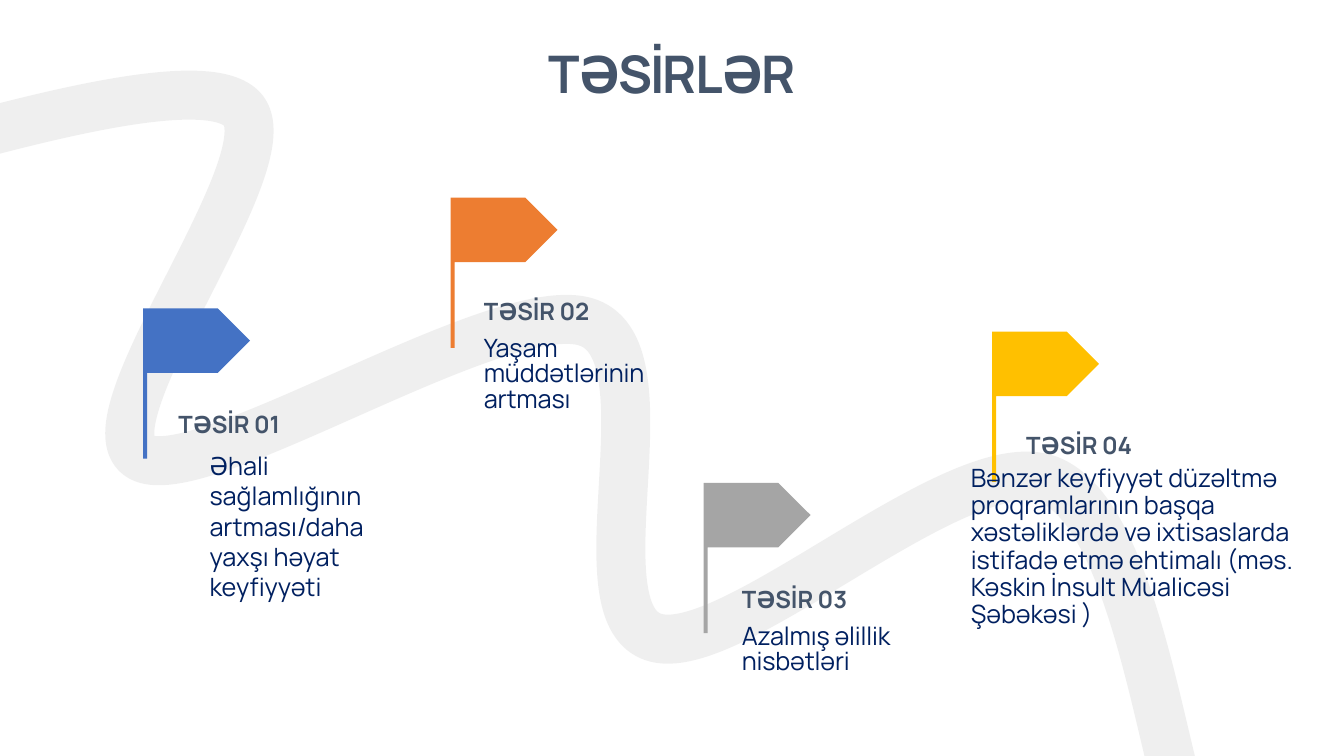
"""Build a slide with four flagged effects along a winding road."""
from lxml import etree
from pptx import Presentation
from pptx.dml.color import RGBColor
from pptx.enum.text import MSO_ANCHOR, MSO_AUTO_SIZE, PP_ALIGN
from pptx.oxml.ns import qn
from pptx.util import Inches, Pt

TOP, BOTTOM = MSO_ANCHOR.TOP, MSO_ANCHOR.BOTTOM
LEFT, CENTER = PP_ALIGN.LEFT, PP_ALIGN.CENTER
GROW, FIXED = MSO_AUTO_SIZE.SHAPE_TO_FIT_TEXT, MSO_AUTO_SIZE.NONE
SLATE, NAVY, ROAD = "44546A", "002060", "D9D9D9"

CURVE = [
    (-1.68, 1.71),
    (-0.98, 1.59), (1.88, 0.6), (2.39, 1.07),
    (2.9, 1.54), (0.81, 4.17), (1.39, 4.53),
    (1.96, 4.88), (4.98, 2.9), (5.83, 3.2),
    (6.68, 3.5), (5.71, 6.06), (6.48, 6.32),
    (7.24, 6.58), (9.5, 4.42), (10.4, 4.76),
    (11.29, 5.1), (11.54, 7.75), (11.86, 8.36),
]
FLAG = [(0, 0), (0.74, 0), (1.06, 0.32), (0.74, 0.64), (0.04, 0.64), (0.04, 1.49), (0, 1.49)]

EFFECTS = [
    ("4472C4", (1.42, 3.06), (1.67, 4.01), (1.48, 4.42, 2.47, 1.62),
     "Əhali sağlamlığının artması/daha yaxşı həyat keyfiyyəti",
     {"indent": 0.5}),
    ("ED7D31", (4.47, 1.96), (4.7, 2.89), (4.7, 3.3, 2.27, 0.87),
     "Yaşam müddətlərinin artması",
     {"pitch": Pt(18), "track": -10}),
    ("A5A5A5", (6.98, 4.79), (7.26, 5.74), (7.26, 6.15, 2.27, 0.62),
     "Azalmış əlillik nisbətləri",
     {"pitch": Pt(18), "track": -10}),
    ("FFC000", (9.84, 3.29), (10.08, 4.22), (9.03, 4.57, 4.08, 1.89),
     "Bənzər keyfiyyət düzəltmə proqramlarının başqa xəstəliklərdə və ixtisaslarda "
     "istifadə etmə ehtimalı (məs. Kəskin İnsult Müalicəsi Şəbəkəsi )",
     {"indent": 0.5, "pitch": 0.9, "fit": FIXED}),
]


def color(code):
    return RGBColor.from_string(code)


class Canvas:
    font = "Manrope"

    def __init__(self, slide):
        self.shapes = slide.shapes

    def outline(self, points, close):
        spots = [(Inches(x), Inches(y)) for x, y in points]
        pen = self.shapes.build_freeform(*spots[0])
        pen.add_line_segments(spots[1:], close=close)
        shape = pen.convert_to_shape()
        shape.shadow.inherit = False
        return shape

    def road(self, points, tint, width, alpha):
        shape = self.outline(points, False)
        shape.fill.background()
        shape.line.width = Pt(width)
        shape.line.color.rgb = color(tint)
        props = shape.element.spPr
        tone = props.find(qn("a:ln")).find(".//" + qn("a:srgbClr"))
        etree.SubElement(tone, qn("a:alpha")).set("val", str(alpha * 1000))
        path = props.find(".//" + qn("a:path"))
        steps = path.findall(qn("a:lnTo"))
        for i in range(0, len(steps), 3):
            bend = etree.SubElement(path, qn("a:cubicBezTo"))
            for step in steps[i:i + 3]:
                bend.append(step[0])
                path.remove(step)

    def flag(self, left, top, tint):
        shape = self.outline([(left + x, top + y) for x, y in FLAG], True)
        shape.fill.solid()
        shape.fill.fore_color.rgb = color(tint)
        shape.line.fill.background()

    def text(self, box, words, size, tint, bold=False, track=0, anchor=TOP,
             align=LEFT, indent=0, pitch=None, fit=GROW):
        frame = self.shapes.add_textbox(*map(Inches, box)).text_frame
        frame.word_wrap = True
        frame.auto_size = fit
        frame.vertical_anchor = anchor
        para = frame.paragraphs[0]
        para.alignment = align
        if pitch:
            para.line_spacing = pitch
        if indent:
            para._p.get_or_add_pPr().set("marL", str(Inches(indent)))
        run = para.add_run()
        run.text = words
        run.font.name = self.font
        run.font.size = Pt(size)
        run.font.bold = bold
        run.font.color.rgb = color(tint)
        if track:
            run._r.get_or_add_rPr().set("spc", str(track))


def main():
    deck = Presentation()
    deck.slide_width, deck.slide_height = Inches(13.33), Inches(7.5)
    canvas = Canvas(deck.slides.add_slide(deck.slide_layouts[6]))
    canvas.road(CURVE, ROAD, 35, 40)
    canvas.text((0.83, 0.36, 11.67, 0.72), "TƏSİRLƏR", 37, SLATE, bold=True,
                track=-140, anchor=BOTTOM, align=CENTER)
    for i, (tint, spot, head, box, words, style) in enumerate(EFFECTS, 1):
        canvas.flag(*spot, tint)
        canvas.text((*head, 2.27, 0.39), f"TƏSİR {i:02}", 17, SLATE,
                    bold=True, track=-10, anchor=BOTTOM)
        canvas.text(box, words, 18, NAVY, **style)
    deck.save("out.pptx")


if __name__ == "__main__":
    main()
